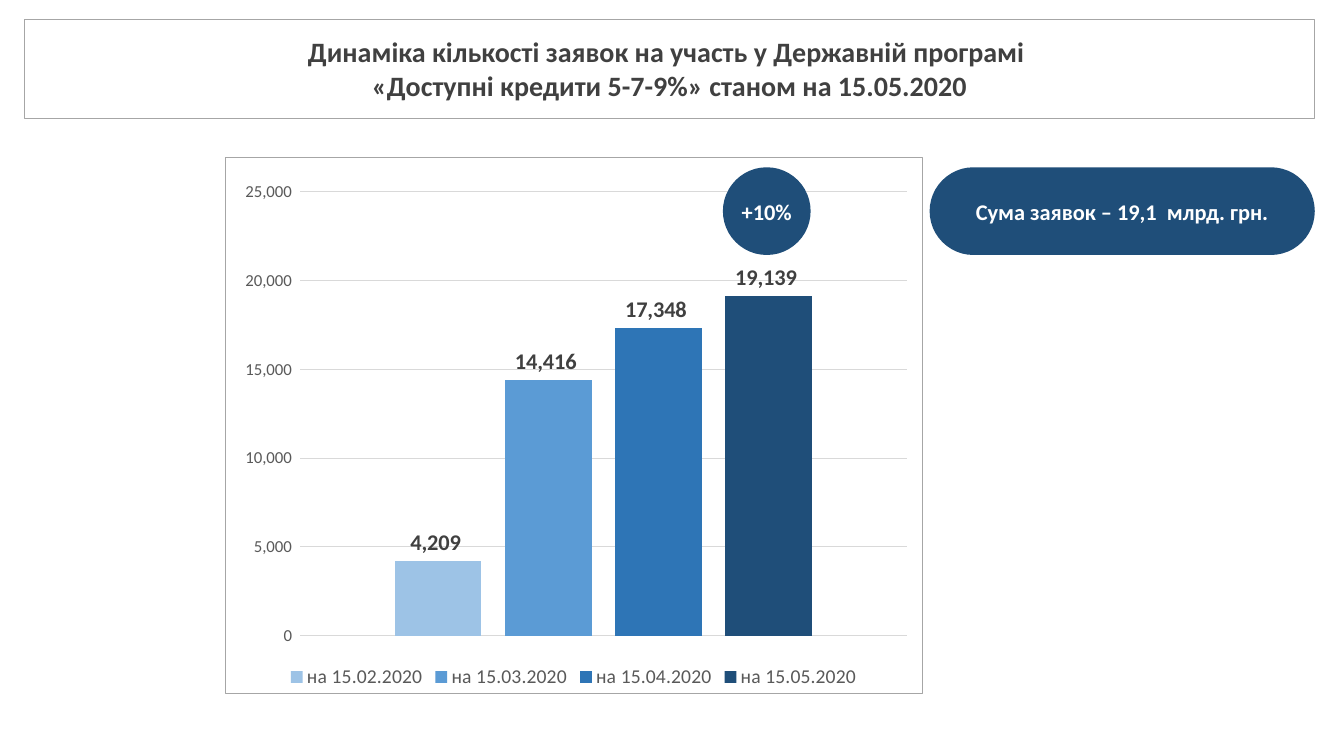
from dataclasses import dataclass

from lxml import etree
from pptx import Presentation
from pptx import util as u
from pptx.chart.data import CategoryChartData
from pptx.dml.color import RGBColor
from pptx.enum import chart as ch, shapes, text
from pptx.oxml import parse_xml
from pptx.oxml.ns import nsdecls, qn

TITLE = ["Динаміка кількості заявок на участь у Державній програмі ",
         "«Доступні кредити 5-7-9%» станом на 15.05.2020"]
APPLICATIONS = [  # date, number of applications, bar colour
    ("на 15.02.2020", 4209, "9DC3E6"),
    ("на 15.03.2020", 14416, "5B9BD5"),
    ("на 15.04.2020", 17348, "2E75B6"),
    ("на 15.05.2020", 19139, "1F4E79"),
]
TOTAL = "Сума заявок – 19,1  млрд. грн."
GROWTH = "+10%"
NUMBER_FORMAT = r"#,##0_ ;\-#,##0\ "


@dataclass
class Theme:
    font: str = "Calibri"
    dark: str = "404040"
    muted: str = "595959"
    border: str = "A6A6A6"
    grid: str = "D9D9D9"
    navy: str = "1F4E79"
    white: str = "FFFFFF"
    title: int = 20
    label: int = 16
    legend: int = 14
    axis: int = 12
    hairline: float = 0.5


THEME = Theme()

# Slide frame, in inches
WIDTH, HEIGHT = 13.33, 7.5
MARGIN = 0.24
RIGHT = 13.04
TITLE_BOX = (MARGIN, 0.19, RIGHT - MARGIN, 0.98)
CHART_BOX = (2.23, 1.56, 6.92, 5.32)
BADGE_TOP, BADGE_HEIGHT = 1.66, 0.87
TOTAL_LEFT, GROWTH_LEFT = 9.22, 7.17
# Shares of the chart's size
PLOT_AREA = {"x": 0.107, "y": 0.064, "w": 0.871, "h": 0.829}


def rgb(code):
    return RGBColor.from_string(code)


def style_font(font, size, color, bold=False):
    font.name, font.size, font.bold = THEME.font, u.Pt(size), bold
    font.color.rgb = rgb(color)


def write(shape, lines, size, color):
    """Centre bold lines in a shape, one paragraph each."""
    frame = shape.text_frame
    frame.word_wrap = True
    frame.auto_size = text.MSO_AUTO_SIZE.NONE
    frame.vertical_anchor = text.MSO_ANCHOR.MIDDLE
    for index, line in enumerate(lines):
        para = frame.add_paragraph() if index else frame.paragraphs[0]
        para.alignment = text.PP_ALIGN.CENTER
        span = para.add_run()
        span.text = line
        style_font(span.font, size, color, True)


def add_title(page):
    title = page.shapes.title
    title.left, title.top, title.width, title.height = map(u.Inches, TITLE_BOX)
    title.line.color.rgb = rgb(THEME.border)
    title.line.width = u.Pt(THEME.hairline)
    write(title, TITLE, THEME.title, THEME.dark)


def add_badge(page, kind, left, width, label):
    badge = page.shapes.add_shape(
        kind, *map(u.Inches, (left, BADGE_TOP, width, BADGE_HEIGHT)))
    badge.shadow.inherit = False
    badge.fill.solid()
    badge.fill.fore_color.rgb = rgb(THEME.navy)
    badge.line.fill.background()
    frame = badge.text_frame
    frame.margin_left = frame.margin_right = 0
    frame.margin_top = frame.margin_bottom = 0
    write(badge, [label], THEME.label, THEME.white)
    return badge


def frame_chart(chart):
    """Outline the chart and fix the inner plot area."""
    body = chart._chartSpace.find(qn("c:chart"))
    body.addnext(parse_xml(
        f'<c:spPr {nsdecls("c", "a")}><a:noFill/>'
        f'<a:ln w="{u.Pt(THEME.hairline)}"><a:solidFill>'
        f'<a:srgbClr val="{THEME.border}"/></a:solidFill></a:ln></c:spPr>'))
    area = body.find(qn("c:plotArea"))
    for old in area.findall(qn("c:layout")):
        area.remove(old)
    layout = etree.Element(qn("c:layout"))
    manual = etree.SubElement(layout, qn("c:manualLayout"))
    settings = {"layoutTarget": "inner", "xMode": "edge", "yMode": "edge", **PLOT_AREA}
    for name, value in settings.items():
        etree.SubElement(manual, qn(f"c:{name}"), val=str(value))
    area.insert(0, layout)


def add_applications_chart(page):
    data = CategoryChartData(number_format=NUMBER_FORMAT)
    data.categories = ["1"]
    for date, count, _ in APPLICATIONS:
        data.add_series(date, [count])
    chart = page.shapes.add_chart(
        ch.XL_CHART_TYPE.COLUMN_CLUSTERED, *map(u.Inches, CHART_BOX), data).chart
    style_font(chart.font, THEME.axis, THEME.muted)
    chart.has_title = False
    chart.has_legend = True
    chart.legend.position = ch.XL_LEGEND_POSITION.BOTTOM
    chart.legend.include_in_layout = False
    style_font(chart.legend.font, THEME.legend, THEME.muted)

    chart.category_axis.visible = False
    axis = chart.value_axis
    axis.minimum_scale, axis.maximum_scale, axis.major_unit = 0, 25000, 5000
    axis.major_tick_mark = axis.minor_tick_mark = ch.XL_TICK_MARK.NONE
    axis.format.line.fill.background()
    axis.major_gridlines.format.line.color.rgb = rgb(THEME.grid)
    axis.major_gridlines.format.line.width = u.Pt(0.75)
    axis.tick_labels.number_format = NUMBER_FORMAT
    axis.tick_labels.number_format_is_linked = False
    style_font(axis.tick_labels.font, THEME.axis, THEME.muted)

    plot = chart.plots[0]
    plot.gap_width, plot.overlap = 219, -27
    plot.vary_by_categories = False
    for series, (_, _, color) in zip(plot.series, APPLICATIONS):
        series.format.fill.solid()
        series.format.fill.fore_color.rgb = rgb(color)
        labels = series.data_labels
        labels.show_value = True
        labels.position = ch.XL_LABEL_POSITION.OUTSIDE_END
        labels.number_format = NUMBER_FORMAT
        labels.number_format_is_linked = False
        style_font(labels.font, THEME.label, THEME.dark, True)
    frame_chart(chart)


def main():
    deck = Presentation()
    deck.slide_width, deck.slide_height = u.Inches(WIDTH), u.Inches(HEIGHT)
    page = deck.slides.add_slide(deck.slide_layouts.get_by_name("Title Only"))
    add_title(page)
    add_applications_chart(page)
    total = add_badge(page, shapes.MSO_SHAPE.ROUNDED_RECTANGLE,
                      TOTAL_LEFT, RIGHT - TOTAL_LEFT, TOTAL)
    total.adjustments[0] = 0.5
    add_badge(page, shapes.MSO_SHAPE.OVAL, GROWTH_LEFT, BADGE_HEIGHT, GROWTH)
    deck.save("out.pptx")


if __name__ == "__main__":
    main()
